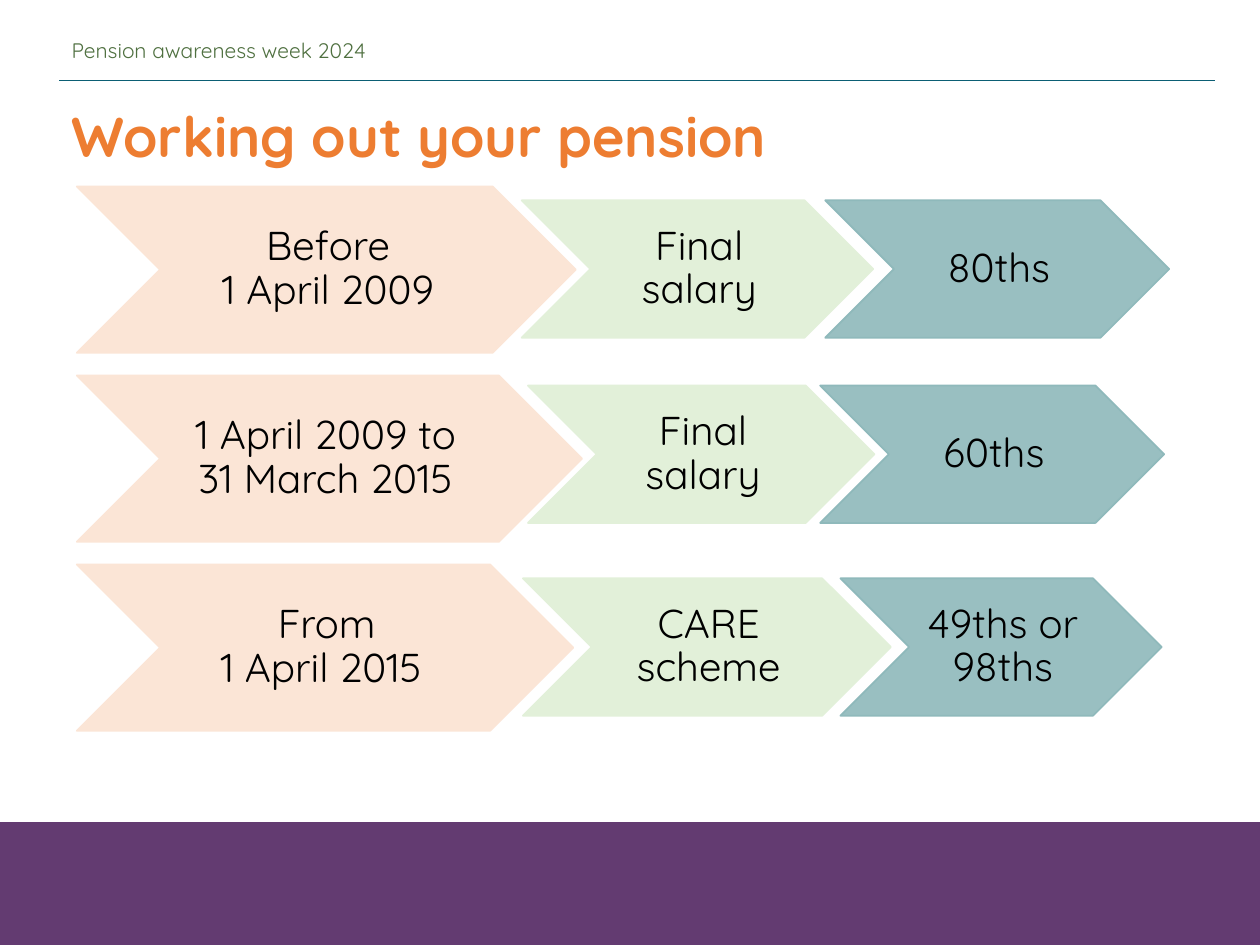
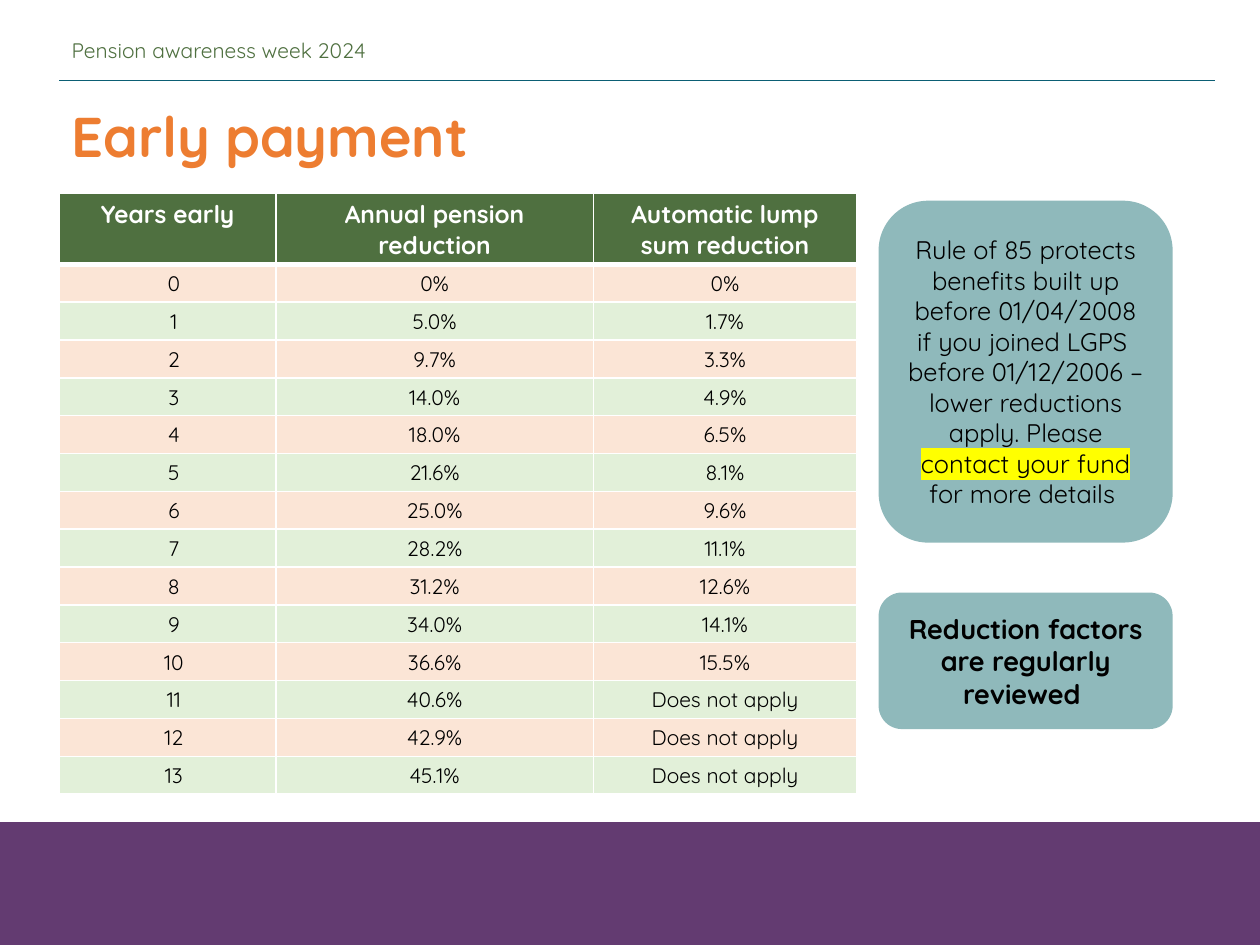
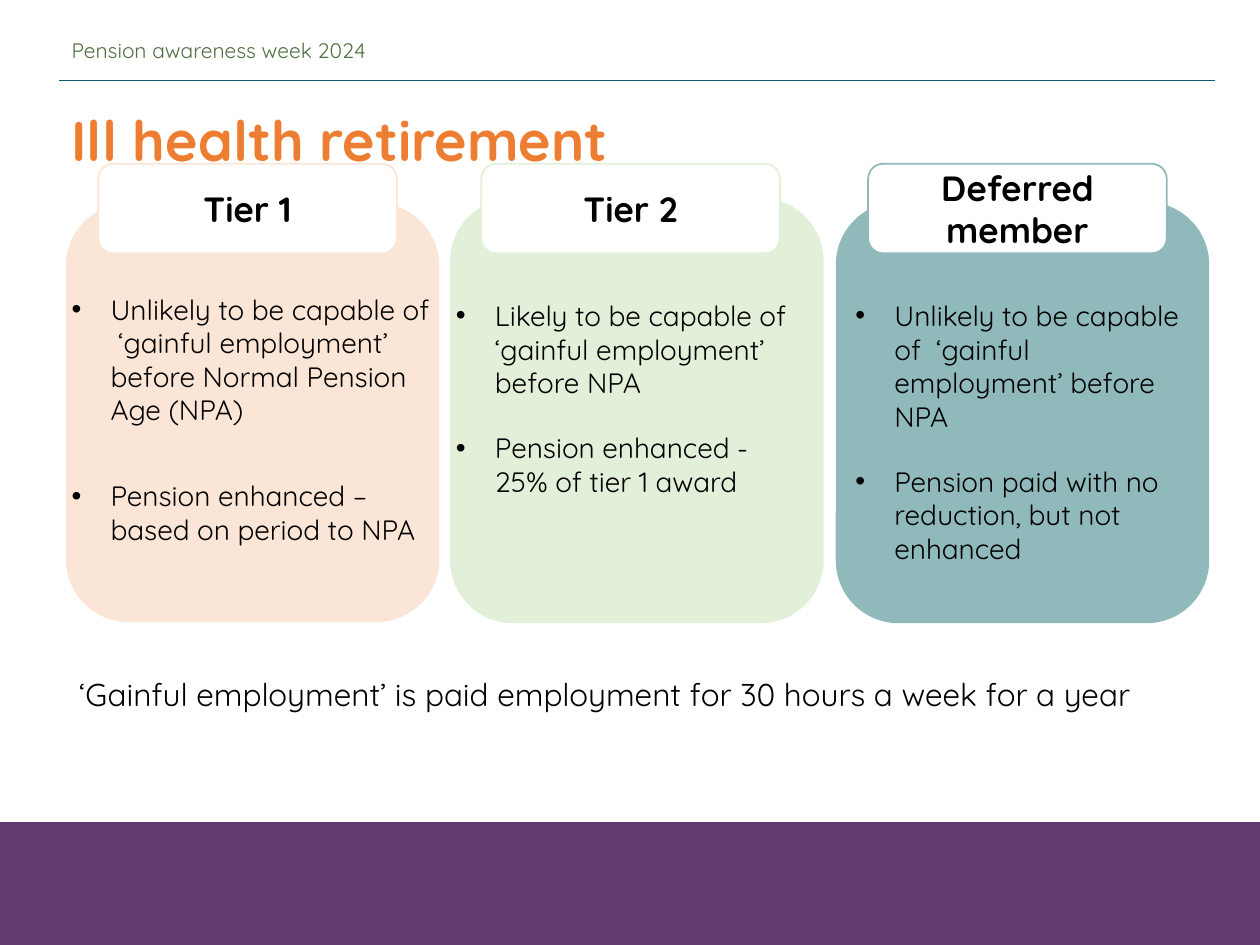
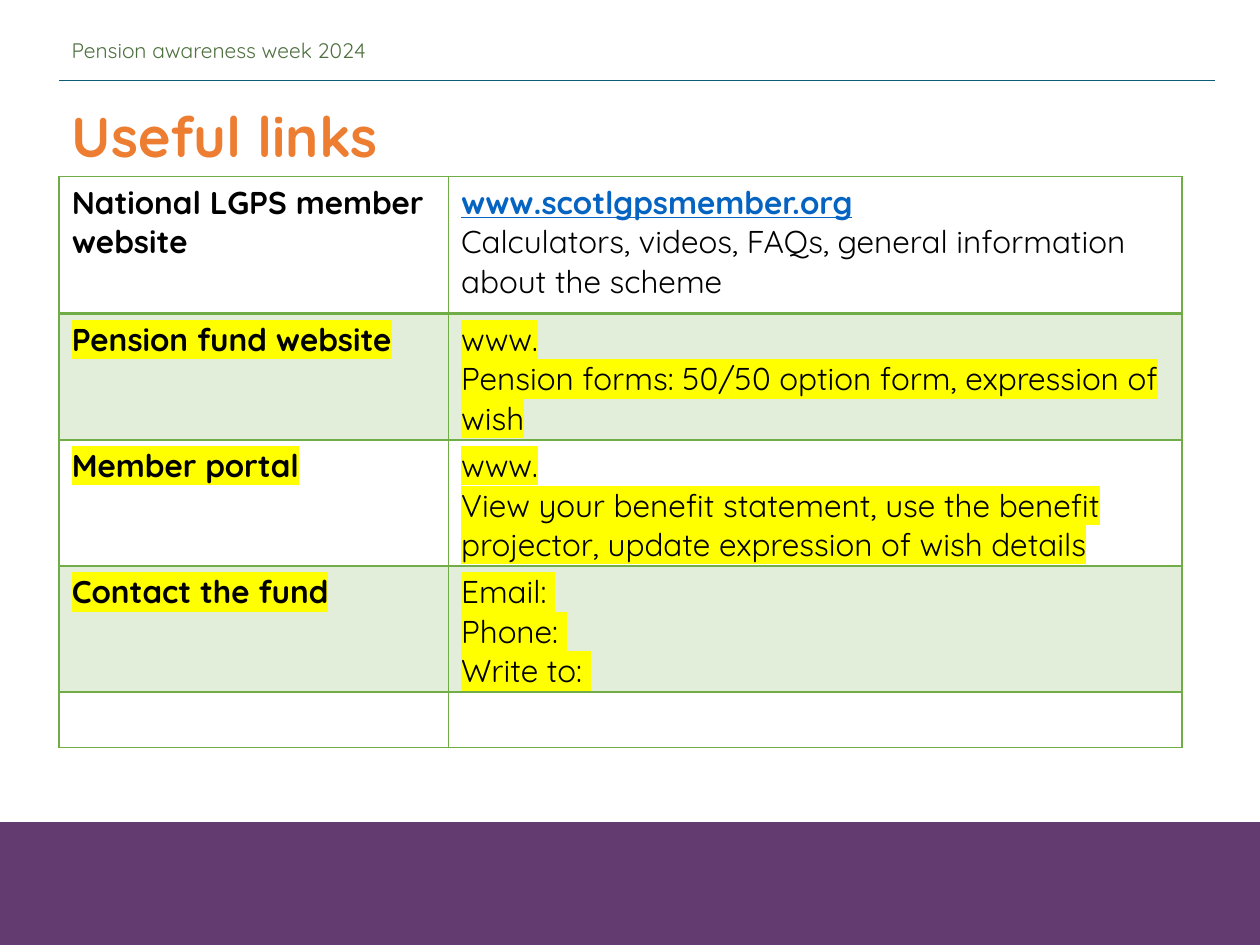
from lxml.etree import SubElement
from pptx import Presentation
from pptx.dml.color import RGBColor as RGB
from pptx.enum.shapes import MSO_CONNECTOR as CONNECTOR, MSO_SHAPE as SHAPE
from pptx.enum.text import MSO_ANCHOR as ANCHOR, PP_ALIGN as ALIGN
from pptx.oxml.ns import qn
from pptx.util import Inches, Pt

COLORS = {
    "purple": "633B71", "blue": "0B5E74", "dark_green": "4F7040", "orange": "ED7D31",
    "peach": "FBE5D6", "mint": "E2F0D9", "teal": "8FB9BB", "grass": "70AD47",
    "link": "0563C1", "yellow": "FFFF00", "white": "FFFFFF", "black": "000000",
}
FONT = "Quicksand"


def write(frame, paragraphs, size, color="black", bold=False, align=None,
          anchor=ANCHOR.TOP, line_spacing=None, bullet=False, highlighted=()):
    frame.word_wrap = True
    frame.vertical_anchor = anchor
    for index, content in enumerate(paragraphs):
        paragraph = frame.add_paragraph() if index else frame.paragraphs[0]
        if isinstance(content, str):
            paragraph.text = content
        else:
            for text in content:
                paragraph.add_run().text = text
        if bullet:
            properties = paragraph._p.get_or_add_pPr()
            properties.set("marL", str(Inches(0.31)))
            properties.set("indent", str(-Inches(0.31)))
            SubElement(properties, qn("a:buFont")).set("typeface", "Arial")
            SubElement(properties, qn("a:buChar")).set("char", "•")
        paragraph.alignment = align
        paragraph.line_spacing = line_spacing
        paragraph.font.name = FONT
        paragraph.font.size = Pt(size)
        paragraph.font.bold = bold
        paragraph.font.color.rgb = RGB.from_string(COLORS[color])
        for run in paragraph.runs:
            if run.text in highlighted:
                highlight = SubElement(run._r.get_or_add_rPr(), qn("a:highlight"))
                SubElement(highlight, qn("a:srgbClr")).set("val", COLORS["yellow"])


def add_box(slide, kind, left, top, width, height, fill, line):
    shape = slide.shapes.add_shape(kind, Inches(left), Inches(top), Inches(width), Inches(height))
    shape.shadow.inherit = False
    shape.fill.solid()
    shape.fill.fore_color.rgb = RGB.from_string(COLORS[fill])
    shape.line.color.rgb = RGB.from_string(COLORS[line])
    shape.line.width = Pt(1)
    return shape


presentation = Presentation()
presentation.slide_width = Inches(10)
presentation.slide_height = Inches(7.5)

slides = []
for title, title_top in [("Working out your pension", 0.76), ("Early payment", 0.76),
                         ("Ill health retirement", 0.79), ("Useful links", 0.76)]:
    slide = presentation.slides.add_slide(presentation.slide_layouts[6])
    slides.append(slide)
    add_box(slide, SHAPE.RECTANGLE, 0, 6.53, 10, 0.97, "purple", "purple")
    rule = slide.shapes.add_connector(CONNECTOR.STRAIGHT, Inches(0.47), Inches(0.64),
                                      Inches(9.64), Inches(0.64))
    rule.line.color.rgb = RGB.from_string(COLORS["blue"])
    rule.line.width = Pt(0.5)
    SubElement(rule._element.spPr, qn("a:effectLst"))
    header = slide.shapes.add_textbox(Inches(0.47), Inches(0.27), Inches(6.51), Inches(0.25))
    write(header.text_frame, ["Pension awareness week 2024"], 12, "dark_green", line_spacing=0.9)
    heading = slide.shapes.add_textbox(Inches(0.47), Inches(title_top), Inches(9.33), Inches(0.64))
    write(heading.text_frame, [title], 32, "orange", bold=True)

pension_slide, early_slide, health_slide, links_slide = slides

periods = [
    (1.48, 1.59, [("Before\n1 April 2009", 0.61, 3.96), ("Final\nsalary", 4.14, 2.79),
                  ("80ths", 6.55, 2.73)]),
    (2.98, 3.06, [("1 April 2009 to \n31 March 2015 ", 0.61, 4.01), ("Final\nsalary", 4.19, 2.75),
                  ("60ths", 6.51, 2.73)]),
    (4.48, 4.59, [("From\n1 April 2015 ", 0.61, 3.94), ("CARE\nscheme", 4.15, 2.92),
                  ("49ths or 98ths", 6.67, 2.55)]),
]
for period_top, detail_top, chevrons in periods:
    for (text, left, width), color in zip(chevrons, ["peach", "mint", "teal"]):
        top, height = (period_top, 1.32) if color == "peach" else (detail_top, 1.09)
        chevron = add_box(pension_slide, SHAPE.CHEVRON, left, top, width, height, color, color)
        if color == "teal":
            fill_color = chevron._element.spPr.find(qn("a:solidFill"))[0]
            SubElement(fill_color, qn("a:alpha")).set("val", "90000")
        frame = chevron.text_frame
        frame.margin_left, frame.margin_right = Inches(0.03), 0
        frame.margin_top = frame.margin_bottom = Inches(0.02)
        write(frame, [text], 23, align=ALIGN.CENTER, anchor=ANCHOR.MIDDLE, line_spacing=0.9)

contact = "contact your fund "
rule_of_85 = ("Rule of 85 protects benefits built up before 01/04/2008 if you joined LGPS  "
              "before 01/12/2006 – lower reductions apply. Please ", contact, "for more details ")
for top, height, content, size, bold in [
    (1.6, 2.7, rule_of_85, 14.5, False),
    (4.71, 1.07, "Reduction factors are regularly reviewed ", 15.5, True),
]:
    callout = add_box(early_slide, SHAPE.ROUNDED_RECTANGLE, 6.98, top, 2.32, height, "teal", "teal")
    write(callout.text_frame, [content], size, bold=bold, align=ALIGN.CENTER,
          anchor=ANCHOR.MIDDLE, highlighted=[contact])

tiers = [
    ("Tier 1", "peach", (0.53, 1.62, 3.31), 0.78, (0.47, 2.27, 3.06), 12,
     ["Unlikely to be capable of  ‘gainful employment’ before Normal Pension Age (NPA)",
      "Pension enhanced – based on period to NPA"]),
    ("Tier 2", "mint", (3.58, 1.58, 3.36), 3.82, (3.52, 2.32, 2.95), 0,
     ["Likely to be capable of ‘gainful employment’ before NPA",
      "Pension enhanced -  25% of tier 1 award"]),
    ("Deferred member", "teal", (6.64, 1.61, 3.33), 6.89, (6.69, 2.32, 2.95), 0,
     ["Unlikely to be capable of  ‘gainful employment’ before NPA",
      "Pension paid with no reduction, but not enhanced"]),
]
for name, color, (left, top, height), label_left, list_place, space_before, points in tiers:
    add_box(health_slide, SHAPE.ROUNDED_RECTANGLE, left, top, 2.95, height, color, color)
    label = add_box(health_slide, SHAPE.ROUNDED_RECTANGLE, label_left, 1.3, 2.37, 0.71, "white", color)
    write(label.text_frame, [name], 20, bold=True, align=ALIGN.CENTER, anchor=ANCHOR.MIDDLE)
    list_left, list_top, list_width = list_place
    point_list = health_slide.shapes.add_textbox(Inches(list_left), Inches(list_top),
                                                 Inches(list_width), Inches(2))
    write(point_list.text_frame, points, 16, bullet=True)
    first, second = point_list.text_frame.paragraphs
    first.space_after = Pt(18)
    second.space_before = Pt(space_before)

definition = health_slide.shapes.add_textbox(Inches(0.53), Inches(5.31), Inches(9.05), Inches(0.4))
write(definition.text_frame,
      ["‘Gainful employment’ is paid employment for 30 hours a week for a year"], 18)

pension_cuts = ["0%", "5.0%", "9.7%", "14.0%", "18.0%", "21.6%", "25.0%", "28.2%", "31.2%",
                "34.0%", "36.6%", "40.6%", "42.9%", "45.1%"]
lump_sum_cuts = ["0%", "1.7%", "3.3%", "4.9%", "6.5%", "8.1%", "9.6%", "11.1%", "12.6%",
                 "14.1%", "15.5%"] + ["Does not apply"] * 3
reductions = [["Years early", "Annual pension reduction", "Automatic lump sum reduction"]]
for years, cuts in enumerate(zip(pension_cuts, lump_sum_cuts)):
    reductions.append([str(years), *cuts])

links = [
    ("National LGPS member website",
     [("www.scotlgpsmember.org", " "),
      "Calculators, videos, FAQs, general information about the scheme"]),
    ("Pension fund website", ["www.", "Pension forms: 50/50 option form, expression of wish"]),
    ("Member portal",
     ["www.", "View your benefit statement, use the benefit projector, "
              "update expression of wish details"]),
    ("Contact the fund", ["Email: ", "Phone: ", "Write to: "]),
    ("", [""]),
]

tables = []
for slide, top, widths, heights, border, header_rule in [
    (early_slide, 1.53, [1.72, 2.52, 2.09], [0.51] + [0.27] * 14, "white", 3),
    (links_slide, 1.4, [3.09, 5.82], [1.09] + [0.44] * 4, "grass", 2),
]:
    table = slide.shapes.add_table(len(heights), len(widths), Inches(0.47), Inches(top),
                                   Inches(sum(widths)), Inches(sum(heights))).table
    table.first_row = table.horz_banding = False
    for column, width in zip(table.columns, widths):
        column.width = Inches(width)
    for row_index, (row, height) in enumerate(zip(table.rows, heights)):
        row.height = Inches(height)
        for cell in row.cells:
            for side in "LRTB":
                under_header = (side, row_index) in [("B", 0), ("T", 1)]
                edge = SubElement(cell._tc.get_or_add_tcPr(), qn("a:ln" + side))
                edge.set("w", str(Pt(header_rule if under_header else 1)))
                edge_fill = SubElement(edge, qn("a:solidFill"))
                SubElement(edge_fill, qn("a:srgbClr")).set("val", COLORS[border])
    tables.append(table)

reduction_table, links_table = tables

for row_index, texts in enumerate(reductions):
    for column_index, text in enumerate(texts):
        cell = reduction_table.cell(row_index, column_index)
        is_header = row_index == 0
        fill = "dark_green" if is_header else ["mint", "peach"][row_index % 2]
        cell.fill.solid()
        cell.fill.fore_color.rgb = RGB.from_string(COLORS[fill])
        write(cell.text_frame, [text], 14 if is_header else 12,
              "white" if is_header else "black", bold=is_header, align=ALIGN.CENTER)
        if not is_header:
            cell.vertical_anchor = ANCHOR.MIDDLE
            if column_index == 0:
                cell.margin_right = 0

for row_index, (name, details) in enumerate(links):
    for column_index, content in enumerate([[name], details]):
        cell = links_table.cell(row_index, column_index)
        if row_index % 2:
            cell.fill.solid()
            cell.fill.fore_color.rgb = RGB.from_string(COLORS["grass"])
            fill_color = cell._tc.tcPr.find(qn("a:solidFill"))[0]
            SubElement(fill_color, qn("a:alpha")).set("val", "20000")
        else:
            cell.fill.background()
        write(cell.text_frame, content, 18, bold=column_index == 0,
              highlighted=content if row_index else ())

link_paragraph = links_table.cell(0, 1).text_frame.paragraphs[0]
link_paragraph.font.bold = True
link_font = link_paragraph.runs[0].font
link_font.underline = True
link_font.color.rgb = RGB.from_string(COLORS["link"])

presentation.save("out.pptx")
